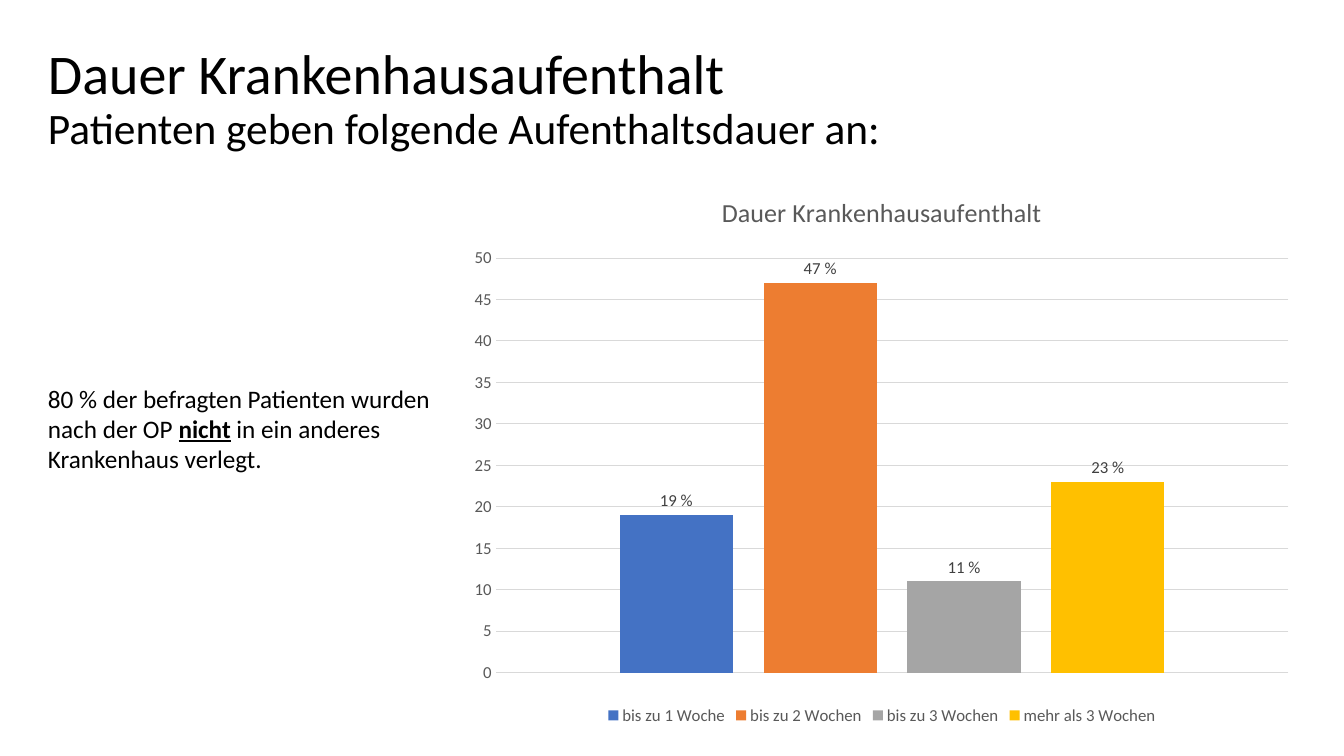
from pptx import Presentation
from pptx import util as u
from pptx.chart import data as cd
from pptx.dml import color as col
from pptx.enum import chart as ch, text as tx
from pptx.oxml import parse_xml
from pptx.oxml.ns import nsdecls

HUES = {"ink": "000000", "grey": "595959", "label": "404040", "grid": "D9D9D9",
        "blue": "4472C4", "orange": "ED7D31", "ash": "A5A5A5", "gold": "FFC000"}
FACE = "Calibri"
STAYS = [
    ("bis zu 1 Woche", 19, "blue"),
    ("bis zu 2 Wochen", 47, "orange"),
    ("bis zu 3 Wochen", 11, "ash"),
    ("mehr als 3 Wochen", 23, "gold"),
]
PLOT = {"x": 0.045, "y": 0.153, "w": 0.934, "h": 0.745}


def rgb(hue):
    return col.RGBColor.from_string(HUES[hue])


def apply(item, form):
    for key, val in form.items():
        setattr(item, key, val)


def style(font, size, hue, **more):
    apply(font, {"name": FACE, "size": u.Pt(size), "bold": False, **more})
    font.color.rgb = rgb(hue)


def frame(slide, box, anchor):
    body = slide.shapes.add_textbox(*map(u.Cm, box)).text_frame
    apply(body, {"word_wrap": True, "vertical_anchor": anchor})
    return body


def write(para, words, size, **more):
    run = para.add_run()
    run.text = words
    style(run.font, size, "ink", **more)


def head(slide, box):
    para = frame(slide, box, tx.MSO_ANCHOR.MIDDLE).paragraphs[0]
    para.line_spacing = 0.9
    write(para, "Dauer Krankenhausaufenthalt", 40)
    para.add_line_break()
    write(para, "Patienten geben folgende Aufenthaltsdauer an:", 31)


def note(slide, box):
    para = frame(slide, box, tx.MSO_ANCHOR.TOP).paragraphs[0]
    write(para, "80 % der befragten Patienten wurden nach der OP ", 18)
    write(para, "nicht", 18, bold=True, underline=True)
    write(para, " in ein anderes Krankenhaus verlegt.", 18)


def place(chart):
    parts = "".join(f'<c:{k} val="{v}"/>' for k, v in PLOT.items())
    modes = '<c:xMode val="edge"/><c:yMode val="edge"/>'
    area = chart.element.chart.plotArea
    for old in area.findall("{*}layout"):
        area.remove(old)
    area.insert(0, parse_xml(
        f'<c:layout {nsdecls("c")}><c:manualLayout>'
        f'<c:layoutTarget val="inner"/>{modes}{parts}'
        "</c:manualLayout></c:layout>"))


def graph(slide, box):
    data = cd.CategoryChartData()
    data.categories = ["1"]
    for name, share, _ in STAYS:
        data.add_series(name, [share])
    kind = ch.XL_CHART_TYPE.COLUMN_CLUSTERED
    chart = slide.shapes.add_chart(kind, *map(u.Cm, box), data).chart
    style(chart.font, 10, "ink")

    chart.has_title = True
    para = chart.chart_title.text_frame.paragraphs[0]
    para.text = "Dauer Krankenhausaufenthalt"
    style(para.runs[0].font, 18.6, "grey")
    chart.chart_title.include_in_layout = False

    chart.has_legend = True
    apply(chart.legend, {"position": ch.XL_LEGEND_POSITION.BOTTOM,
                         "include_in_layout": False})
    style(chart.legend.font, 12, "grey")

    chart.category_axis.visible = False
    axis = chart.value_axis
    tick = ch.XL_TICK_MARK.NONE
    apply(axis, {"minimum_scale": 0, "maximum_scale": 50, "major_unit": 5,
                 "major_tick_mark": tick, "minor_tick_mark": tick})
    axis.format.line.fill.background()
    style(axis.tick_labels.font, 12, "grey")
    grid = axis.major_gridlines.format.line
    grid.width = u.Pt(0.75)
    grid.color.rgb = rgb("grid")

    plot = chart.plots[0]
    apply(plot, {"gap_width": 219, "overlap": -27, "vary_by_categories": False})
    for bar, (_, _, hue) in zip(plot.series, STAYS):
        bar.format.fill.solid()
        bar.format.fill.fore_color.rgb = rgb(hue)
        apply(bar.data_labels, {
            "show_value": True, "number_format": '0" %"',
            "number_format_is_linked": False,
            "position": ch.XL_LABEL_POSITION.OUTSIDE_END})
        style(bar.data_labels.font, 12, "label")
    place(chart)


def main():
    deck = Presentation()
    apply(deck, {"slide_width": u.Cm(33.87), "slide_height": u.Cm(19.05)})
    slide = deck.slides.add_slide(deck.slide_layouts[6])
    head(slide, (0.96, 0.68, 29.21, 3.68))
    graph(slide, (11.53, 4.36, 21.39, 14.02))
    note(slide, (0.96, 9.53, 10.36, 2.57))
    deck.save("out.pptx")


if __name__ == "__main__":
    main()
